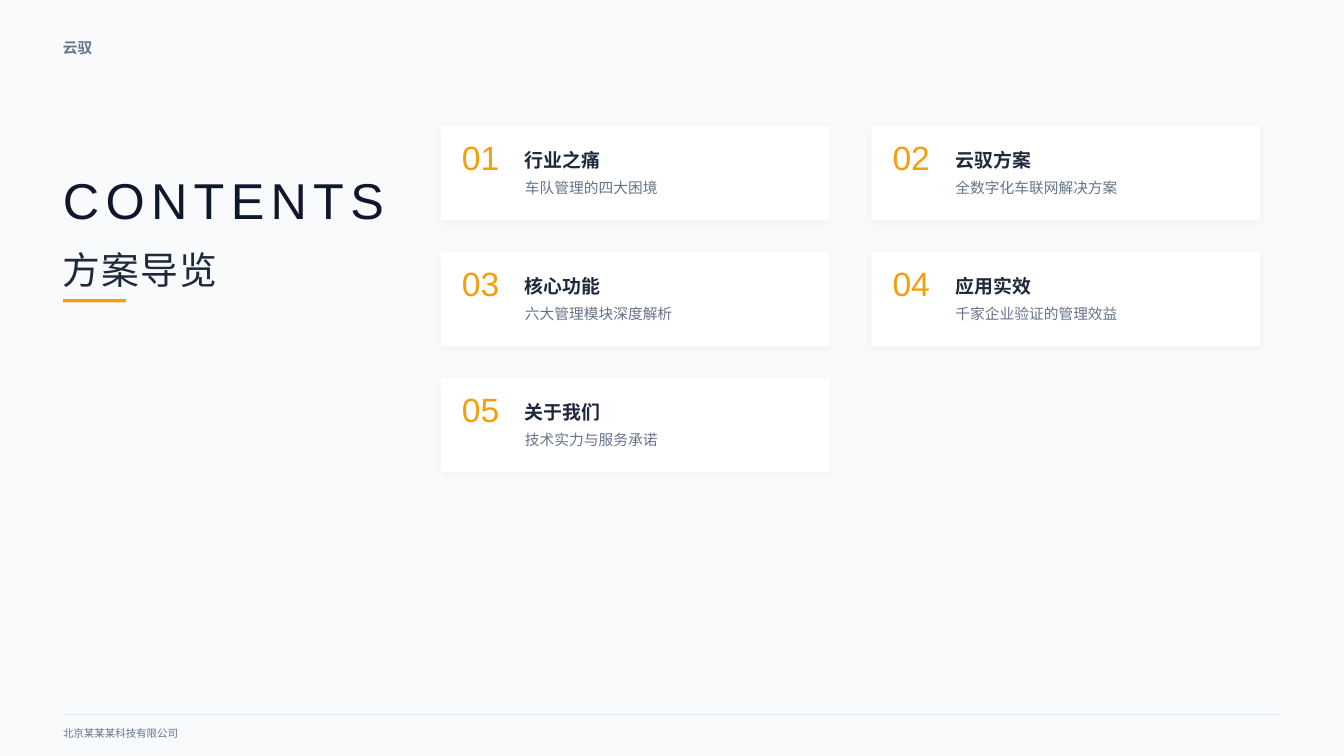
import pptx
import pptx.util
import pptx.dml.color
import pptx.enum.shapes
import pptx.enum.text
import pptx.oxml
import pptx.oxml.ns

RGBColor = pptx.dml.color.RGBColor
Pt = pptx.util.Pt
ANCHOR = pptx.enum.text.MSO_ANCHOR

PALE = RGBColor(0xF8, 0xFA, 0xFC)
WHITE = RGBColor(0xFF, 0xFF, 0xFF)
NAVY = RGBColor(0x0F, 0x17, 0x2A)
SLATE = RGBColor(0x1E, 0x29, 0x3B)
GREY = RGBColor(0x64, 0x74, 0x8B)
RULE = RGBColor(0xE2, 0xE8, 0xF0)
AMBER = RGBColor(0xF5, 0x9E, 0x0B)

WIDE = pptx.util.Inches(17.78)
HIGH = pptx.util.Inches(10)
COL = WIDE / 128
ROW = HIGH / 72

TOPICS = [
    ("行业之痛", "车队管理的四大困境"),
    ("云驭方案", "全数字化车联网解决方案"),
    ("核心功能", "六大管理模块深度解析"),
    ("应用实效", "千家企业验证的管理效益"),
    ("关于我们", "技术实力与服务承诺"),
]

SHADE = (
    f'<a:effectLst {pptx.oxml.ns.nsdecls("a")}>'
    f'<a:outerShdw blurRad="{Pt(8)}" dist="{Pt(2)}" dir="5400000" rotWithShape="0">'
    '<a:srgbClr val="000000"><a:alpha val="3000"/></a:srgbClr>'
    '</a:outerShdw></a:effectLst>'
)


def place(box, left, top, width, height):
    return box[0] + left, box[1] + top, width, height


def scale(box):
    left, top, width, height = box
    return [round(n) for n in (left * COL, top * ROW, width * COL, height * ROW)]


def add_rect(slide, box, fill):
    shape = slide.shapes.add_shape(
        pptx.enum.shapes.MSO_SHAPE.RECTANGLE, *scale(box))
    shape.shadow.inherit = False
    shape.fill.solid()
    shape.fill.fore_color.rgb = fill
    shape.line.fill.background()
    return shape


def add_text(slide, box, lines, anchor=ANCHOR.MIDDLE, wrap=False, lead=None, gap=0):
    frame = slide.shapes.add_textbox(*scale(box)).text_frame
    frame.margin_left = frame.margin_right = 0
    frame.margin_top = frame.margin_bottom = 0
    frame.word_wrap = wrap
    frame.vertical_anchor = anchor
    frame.text = "\n".join(line[0] for line in lines)
    for para, (_, size, color, bold) in zip(frame.paragraphs, lines):
        if lead:
            para.line_spacing = lead
        font = para.runs[0].font
        font.name = "Arial"
        font.size = Pt(size)
        font.bold = bold
        font.color.rgb = color
        if gap:
            para.runs[0]._r.get_or_add_rPr().set("spc", str(gap * 100))


def add_head(slide, box):
    add_text(slide, box, [("云驭", 14, GREY, True)], lead=1.5)


def add_title(slide, box):
    add_text(slide, place(box, 0, 0, 34, 6),
             [("CONTENTS", 48, NAVY, False)], gap=6)
    add_text(slide, place(box, 0, 7, 20, 4),
             [("方案导览", 36, SLATE, False)], lead=1.3, gap=1)
    add_rect(slide, place(box, 0, 12.5, 6, 0.3), AMBER)


def add_card(slide, box, number, topic, detail):
    card = add_rect(slide, box, WHITE)
    props = card._element.spPr
    props.remove(props.find(pptx.oxml.ns.qn("a:effectLst")))
    props.append(pptx.oxml.parse_xml(SHADE))
    add_text(slide, place(box, 2, 1, 6.2, 4),
             [(f"{number:02}", 32, AMBER, False)], ANCHOR.TOP)
    add_text(slide, place(box, 8, 1.3, 27, 6),
             [(topic, 18, SLATE, True), (detail, 14, GREY, False)],
             ANCHOR.TOP, wrap=True, lead=1.4)


def add_cards(slide, box):
    for index, (topic, detail) in enumerate(TOPICS):
        row, col = divmod(index, 2)
        spot = place(box, col * 41, row * 12, 37, 9)
        add_card(slide, spot, index + 1, topic, detail)


def add_foot(slide, box):
    add_rect(slide, place(box, 0, 0, box[2], 0.1), RULE)
    add_text(slide, place(box, 0, 0.8, 40, 2),
             [("北京某某某科技有限公司", 10, GREY, False)])


def main():
    deck = pptx.Presentation()
    deck.slide_width = WIDE
    deck.slide_height = HIGH
    slide = deck.slides.add_slide(deck.slide_layouts[6])
    slide.background.fill.solid()
    slide.background.fill.fore_color.rgb = PALE
    add_head(slide, (6, 3, 10, 2.2))
    add_title(slide, (6, 16, 34, 12.8))
    add_cards(slide, (42, 12, 78, 33))
    add_foot(slide, (6, 68, 116, 2.8))
    deck.save("out.pptx")


if __name__ == "__main__":
    main()
